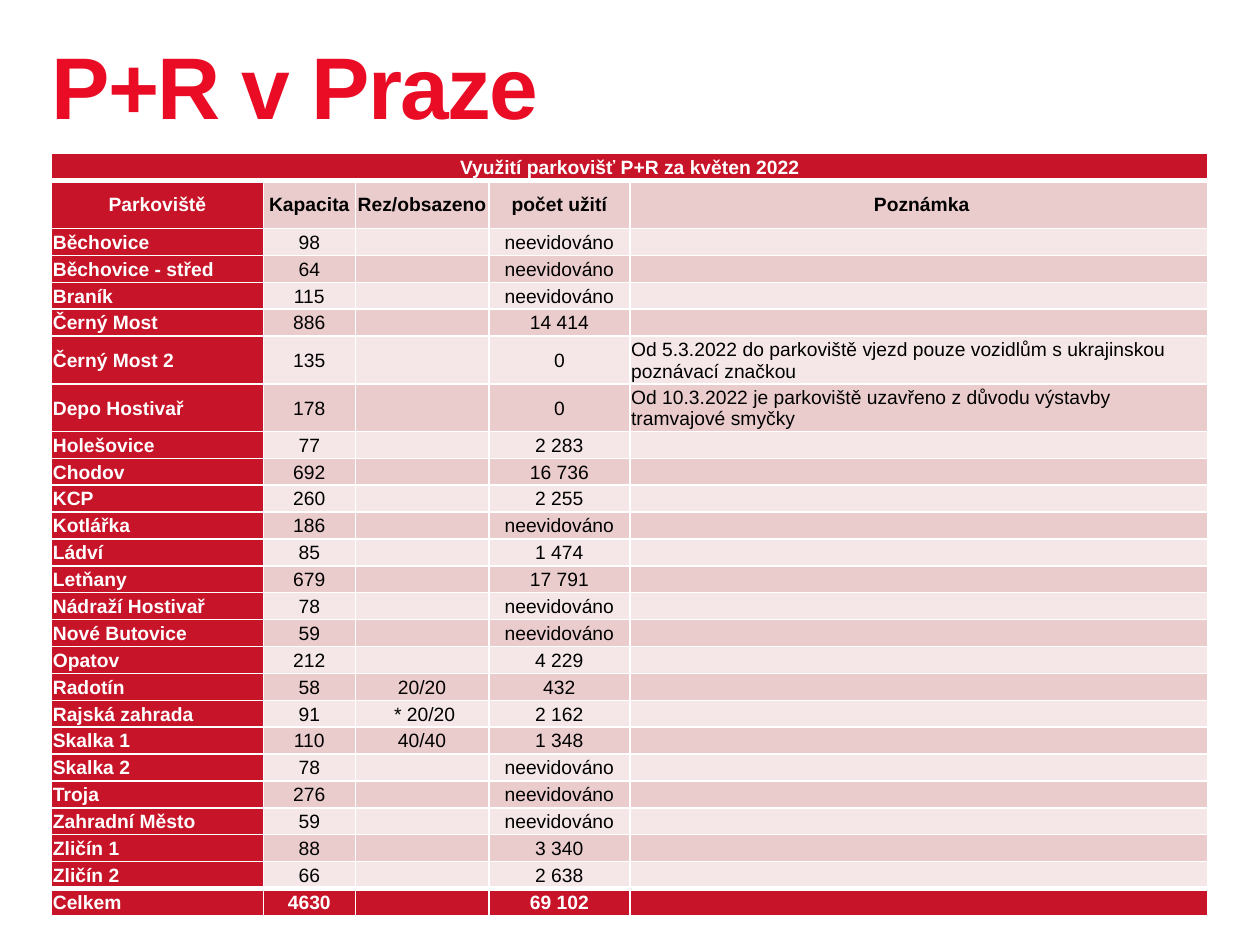
from lxml import etree
from pptx import Presentation
from pptx.dml.color import RGBColor
from pptx.enum.text import MSO_ANCHOR, PP_ALIGN
from pptx.oxml.ns import qn
from pptx.util import Inches, Pt

CENTER, LEFT = PP_ALIGN.CENTER, PP_ALIGN.LEFT
MIDDLE = MSO_ANCHOR.MIDDLE

FONT = "Arial"
COLORS = {
    "title": "E90C24",
    "red": "C81428",
    "dark_band": "EBCCCD",
    "light_band": "F5E7E8",
    "white": "FFFFFF",
    "black": "000000",
}

COL_WIDTHS = [1.68, 0.73, 1.06, 1.12, 4.59]
TABLE_HEIGHT = 6.02
TALL_ROWS = {1: 0.38, 6: 0.38, 7: 0.35}

CAPTION = "Využití parkovišť P+R za květen 2022"
HEADER = ["Parkoviště", "Kapacita", "Rez/obsazeno", "počet užití", " Poznámka"]
NOT_COUNTED = "neevidováno"
CAR_PARKS = [
    ("Běchovice", "98", "", NOT_COUNTED, ""),
    ("Běchovice - střed", "64", "", NOT_COUNTED, ""),
    ("Braník", "115", "", NOT_COUNTED, ""),
    ("Černý Most", "886", "", "14 414", ""),
    ("Černý Most 2", "135", "", "0",
     "Od 5.3.2022 do parkoviště vjezd pouze vozidlům s ukrajinskou poznávací značkou"),
    ("Depo Hostivař", "178", "", "0",
     "Od 10.3.2022 je parkoviště uzavřeno z důvodu výstavby tramvajové smyčky"),
    ("Holešovice", "77", "", "2 283", ""),
    ("Chodov", "692", "", "16 736", ""),
    ("KCP", "260", "", "2 255", ""),
    ("Kotlářka", "186", "", NOT_COUNTED, ""),
    ("Ládví", "85", "", "1 474", ""),
    ("Letňany", "679", "", "17 791", ""),
    ("Nádraží Hostivař", "78", "", NOT_COUNTED, ""),
    ("Nové Butovice", "59", "", NOT_COUNTED, ""),
    ("Opatov", "212", "", "4 229", ""),
    ("Radotín", "58", "20/20", "432", ""),
    ("Rajská zahrada", "91", " * 20/20", "2 162", ""),
    ("Skalka 1", "110", "40/40", "1 348", ""),
    ("Skalka 2", "78", "", NOT_COUNTED, ""),
    ("Troja", "276", "", NOT_COUNTED, ""),
    ("Zahradní Město", "59", "", NOT_COUNTED, ""),
    ("Zličín 1", "88", "", "3 340", ""),
    ("Zličín 2", "66", "", "2 638", ""),
]
TOTAL = ("Celkem", "4630", "", "69 102", "")


def rgb(name):
    return RGBColor.from_string(COLORS[name])


def write(tf, text, size=11, color="black", bold=False, align=LEFT):
    p = tf.paragraphs[0]
    p.alignment = align
    if not text:
        # The end mark carries the size, so an empty cell stays low.
        etree.SubElement(p._p, qn("a:endParaRPr"), sz=str(size * 100))
        return p
    r = p.add_run()
    r.text = text
    r.font.name, r.font.size, r.font.bold = FONT, Pt(size), bold
    r.font.color.rgb = rgb(color)
    return p


def set_borders(cell, top=1, bottom=1):
    """Draw white borders; the widths are in points."""
    tcPr = cell._tc.get_or_add_tcPr()
    sides = [("a:lnL", 1), ("a:lnR", 1), ("a:lnT", top), ("a:lnB", bottom)]
    for i, (tag, width) in enumerate(sides):
        ln = etree.Element(qn(tag), w=str(Pt(width)))
        fill = etree.SubElement(ln, qn("a:solidFill"))
        etree.SubElement(fill, qn("a:srgbClr"), val=COLORS["white"])
        tcPr.insert(i, ln)


def fill_cell(cell, text, fill, top=1, bottom=1, **fmt):
    cell.margin_left = cell.margin_right = cell.margin_top = Inches(0.01)
    cell.margin_bottom = 0
    cell.vertical_anchor = MIDDLE
    cell.fill.solid()
    cell.fill.fore_color.rgb = rgb(fill)
    set_borders(cell, top, bottom)
    write(cell.text_frame, text, **fmt)


def add_title(slide, text):
    sp = slide.shapes.add_textbox(Inches(0.41), Inches(0.32), Inches(9.16), Inches(1.37))
    tf = sp.text_frame
    tf.word_wrap = True
    tf.margin_left = tf.margin_right = tf.margin_top = tf.margin_bottom = 0
    p = write(tf, text, size=50, color="title", bold=True)
    p.line_spacing = Pt(55)
    p.runs[0].font._element.set("spc", "-100")


def add_usage_table(slide):
    rows = [[CAPTION, "", "", "", ""], HEADER, *CAR_PARKS, TOTAL]
    last = len(rows) - 1
    table = slide.shapes.add_table(
        len(rows), len(COL_WIDTHS), Inches(0.41), Inches(1.22),
        Inches(sum(COL_WIDTHS)), Inches(TABLE_HEIGHT)).table
    for column, width in zip(table.columns, COL_WIDTHS):
        column.width = Inches(width)
    plain_height = (TABLE_HEIGHT - sum(TALL_ROWS.values())) / (len(rows) - len(TALL_ROWS))

    for i, values in enumerate(rows):
        table.rows[i].height = Inches(TALL_ROWS.get(i, plain_height))
        for j, text in enumerate(values):
            red = i in (0, last) or j == 0
            body = 1 < i < last
            fill_cell(
                table.cell(i, j), text,
                fill="red" if red else "dark_band" if i % 2 else "light_band",
                top=3 if i in (1, last) else 1,
                bottom=3 if i in (0, last - 1) else 1,
                color="white" if red else "black",
                bold=red or not body,
                align=LEFT if i > 1 and j in (0, 4) else CENTER)
    table.cell(0, 0).merge(table.cell(0, len(COL_WIDTHS) - 1))


def main():
    prs = Presentation()
    prs.slide_width, prs.slide_height = Inches(10), Inches(7.5)
    slide = prs.slides.add_slide(prs.slide_layouts[6])
    add_title(slide, "P+R v Praze")
    add_usage_table(slide)
    prs.save("out.pptx")


if __name__ == "__main__":
    main()
